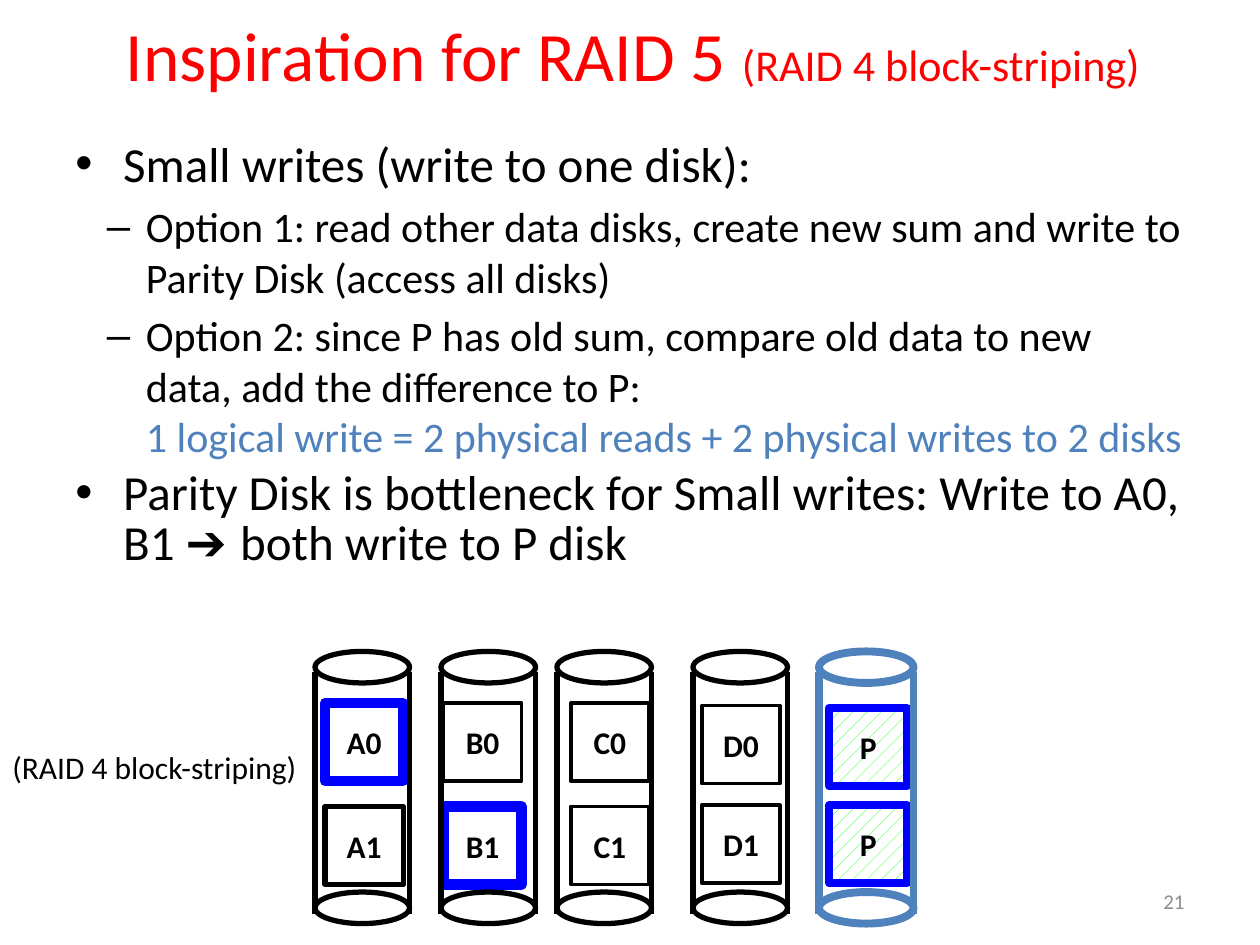
import pptx
import pptx.util
import pptx.dml.color
import pptx.enum.dml
import pptx.enum.shapes
import pptx.enum.text
import pptx.oxml.ns
from lxml import etree

Inches, Pt = pptx.util.Inches, pptx.util.Pt
Align = pptx.enum.text.PP_ALIGN
Anchor = pptx.enum.text.MSO_ANCHOR
Shape = pptx.enum.shapes.MSO_SHAPE


class Theme:
    font, symbol_font = "Calibri", "Arial"
    black, red, blue = "000000", "FF0000", "0000FF"
    accent, grey, green, white = "4F81BD", "8C8C8C", "00FF00", "FFFFFF"
    title, subtitle, point, option, label, number = 39.6, 25.2, 28, 24, 18, 12
    thin, medium, strong, heavy = 2, 3, 4.5, 6


BREAK = "\n"
TITLE = [("Inspiration for RAID 5 ", {"size": Theme.title}),
         ("(RAID 4 block-striping)", {"size": Theme.subtitle}),
         (" ", {"size": Theme.title})]
# (level, pieces); a piece is (text, font differences)
BODY = [
    (0, [("Small writes (write to one disk):", {})]),
    (1, [("Option 1: read other data disks, create new sum and write to "
          "Parity Disk (access all disks)", {})]),
    (1, [("Option 2: since P has old sum, compare old data to new data, "
          "add the difference to P: ", {}),
         (BREAK, {}),
         ("1 logical write = 2 physical reads + 2 physical writes to 2 disks",
          {"color": Theme.accent})]),
    (0, [("Parity Disk is bottleneck for Small writes: Write to A0, B1 ", {}),
         ("➔ ", {"name": Theme.symbol_font}),
         ("both write to P disk", {})]),
]
LEVELS = [
    {"size": Theme.point, "left": 0.38, "hang": 0.38, "bullet": "•", "spacing": 0.85},
    {"size": Theme.option, "left": 0.56, "hang": 0.31, "bullet": "–", "spacing": None},
]
CAPTION = "(RAID 4 block-striping)"
SLIDE_NUMBER = "21"

PLAIN = (Theme.black, Theme.thin)
WRITTEN = (Theme.blue, Theme.heavy)
PARITY = (Theme.blue, Theme.strong)
# left of disk, left of blocks, disk outline, blocks as (text, top, outline)
DISKS = [
    (2.5, 2.58, (Theme.black, Theme.medium),
     [("A0", 5.58, WRITTEN), ("A1", 6.4, (Theme.black, Theme.medium))]),
    (3.5, 3.52, (Theme.black, Theme.medium), [("B0", 5.58, PLAIN), ("B1", 6.4, WRITTEN)]),
    (4.42, 4.53, (Theme.black, Theme.medium), [("C0", 5.58, PLAIN), ("C1", 6.4, PLAIN)]),
    (5.5, 5.57, (Theme.black, Theme.medium), [("D0", 5.6, PLAIN), ("D1", 6.39, PLAIN)]),
    (6.5, 6.58, (Theme.accent, Theme.strong), [("P", 5.62, PARITY), ("P", 6.39, PARITY)]),
]
BLOCK = 0.62
DISK_WIDTH, RIM_HEIGHT = 0.75, 0.25
RIM_TOPS = (5.17, 7.08)
SIDE_TOP, SIDE_BOTTOM = 5.33, 7.25


def rgb(value):
    return pptx.dml.color.RGBColor.from_string(value)


def set_font(font, size=None, color=None, name=None, bold=None):
    if size:
        font.size = Pt(size)
    if color:
        font.color.rgb = rgb(color)
    if name:
        font.name = name
    if bold is not None:
        font.bold = bold


def set_line(shape, outline):
    color, width = outline
    shape.line.color.rgb = rgb(color)
    shape.line.width = Pt(width)


def add_pieces(paragraph, pieces):
    for text, differences in pieces:
        if text == BREAK:
            paragraph.add_line_break()
        else:
            run = paragraph.add_run()
            run.text = text
            set_font(run.font, **differences)


def add_text_box(slide, box, wrap=True, anchor=Anchor.TOP):
    frame = slide.shapes.add_textbox(*map(Inches, box)).text_frame
    frame.word_wrap = wrap
    frame.vertical_anchor = anchor
    return frame


def add_line_of_text(slide, box, pieces, size, color, align=Align.LEFT, **options):
    paragraph = add_text_box(slide, box, **options).paragraphs[0]
    paragraph.alignment = align
    set_font(paragraph.font, size, color, Theme.font)
    add_pieces(paragraph, pieces)


def set_bullet(paragraph, level):
    properties = paragraph._p.get_or_add_pPr()
    properties.set("marL", str(Inches(level["left"])))
    properties.set("indent", str(-Inches(level["hang"])))
    qn = pptx.oxml.ns.qn
    etree.SubElement(properties, qn("a:buFont"), typeface=Theme.symbol_font)
    etree.SubElement(properties, qn("a:buChar"), char=level["bullet"])


def add_body(slide):
    frame = add_text_box(slide, (0.5, 1.08, 9, 4.52))
    for index, (depth, pieces) in enumerate(BODY):
        level = LEVELS[depth]
        paragraph = frame.add_paragraph() if index else frame.paragraphs[0]
        paragraph.level = depth
        paragraph.line_spacing = level["spacing"]
        paragraph.space_before = Pt(0.2 * level["size"])
        set_bullet(paragraph, level)
        set_font(paragraph.font, level["size"], Theme.black, Theme.font)
        add_pieces(paragraph, pieces)


def add_outline(shapes, kind, box, outline):
    """Add an unfilled, shadowless preset shape."""
    shape = shapes.add_shape(kind, *map(Inches, box))
    shape.shadow.inherit = False
    shape.fill.background()
    set_line(shape, outline)
    return shape


def add_block(slide, left, top, text, outline):
    shape = add_outline(slide.shapes, Shape.RECTANGLE, (left, top, BLOCK, BLOCK), outline)
    if outline == PARITY:
        shape.fill.patterned()
        shape.fill.pattern = pptx.enum.dml.MSO_PATTERN.PERCENT_10
        shape.fill.fore_color.rgb = rgb(Theme.green)
        shape.fill.back_color.rgb = rgb(Theme.white)
    frame = shape.text_frame
    frame.word_wrap = False
    frame.vertical_anchor = Anchor.MIDDLE
    paragraph = frame.paragraphs[0]
    paragraph.alignment = Align.CENTER
    set_font(paragraph.font, Theme.label, Theme.black, Theme.font, True)
    add_pieces(paragraph, [(text, {"color": Theme.black})])


def add_disk(slide, left, outline):
    shapes = slide.shapes.add_group_shape().shapes
    top_rim, bottom_rim = RIM_TOPS
    add_outline(shapes, Shape.OVAL, (left, top_rim, DISK_WIDTH, RIM_HEIGHT), outline)
    for x in (left, left + DISK_WIDTH):
        side = shapes.add_connector(pptx.enum.shapes.MSO_CONNECTOR.STRAIGHT,
                                    *map(Inches, (x, SIDE_TOP, x, SIDE_BOTTOM)))
        set_line(side, outline)
        etree.SubElement(side._element.spPr, pptx.oxml.ns.qn("a:effectLst"))
    add_outline(shapes, Shape.OVAL, (left, bottom_rim, DISK_WIDTH, RIM_HEIGHT), outline)


def main():
    presentation = pptx.Presentation()
    presentation.slide_width, presentation.slide_height = Inches(10), Inches(7.5)
    slide = presentation.slides.add_slide(presentation.slide_layouts[6])

    add_line_of_text(slide, (0.5, 0.17, 9.17, 0.52), TITLE, Theme.title, Theme.red,
                     Align.CENTER, anchor=Anchor.MIDDLE)
    add_body(slide)
    for _, block_left, _, blocks in DISKS:
        for text, top, outline in blocks:
            add_block(slide, block_left, top, text, outline)
    for left, _, outline, _ in DISKS:
        add_disk(slide, left, outline)
    add_line_of_text(slide, (0, 5.89, 2.49, 0.4), [(CAPTION, {})], Theme.label,
                     Theme.black, wrap=False)
    add_line_of_text(slide, (7.17, 6.95, 2.33, 0.4), [(SLIDE_NUMBER, {})], Theme.number,
                     Theme.grey, Align.RIGHT, anchor=Anchor.MIDDLE)
    presentation.save("out.pptx")


if __name__ == "__main__":
    main()
